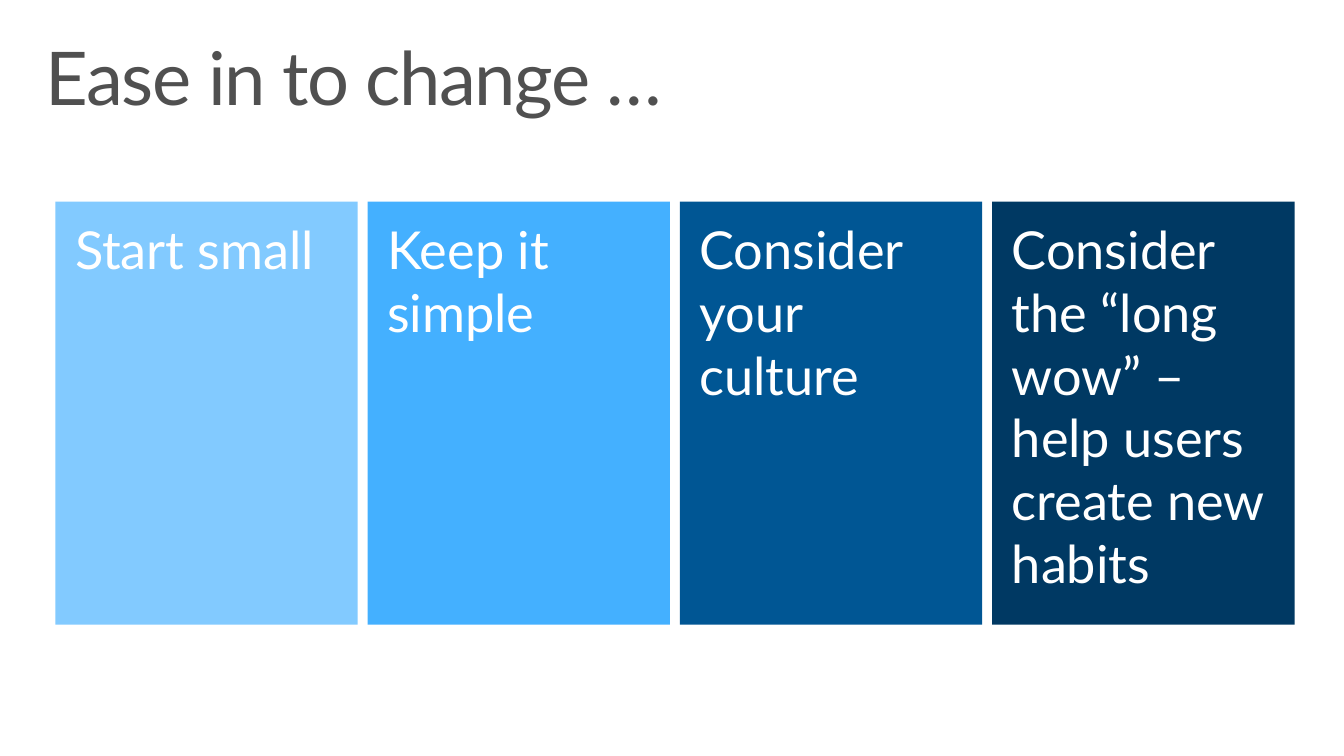
"""Build the slide "Ease in to change …" with four coloured panels."""
from pptx import Presentation
from pptx.dml.color import RGBColor
from pptx.enum.shapes import MSO_SHAPE
from pptx.enum.text import MSO_ANCHOR, PP_ALIGN
from pptx.util import Inches, Pt

RECTANGLE = MSO_SHAPE.RECTANGLE
TOP = MSO_ANCHOR.TOP
LEFT = PP_ALIGN.LEFT
PANELS = [
    ("Start small", "82CAFF"),
    ("Keep it simple", "44B0FF"),
    ("Consider your culture", "005694"),
    ("Consider the “long wow” – help users create new habits", "003963"),
]
PANEL_LEFT, PANEL_STEP = 0.56, 3.16


def color(hex_value):
    return RGBColor.from_string(hex_value)


def write_text(shape, text, size, hex_value, side, edge):
    frame = shape.text_frame
    frame.text = text
    frame.word_wrap = True
    frame.vertical_anchor = TOP
    frame.margin_left = frame.margin_right = Inches(side)
    frame.margin_top = frame.margin_bottom = Inches(edge)
    para = frame.paragraphs[0]
    para.alignment = LEFT
    span = para.runs[0]
    span.font.name = "Lato"
    span.font.size = Pt(size)
    span.font.color.rgb = color(hex_value)
    return para


deck = Presentation()
deck.slide_width, deck.slide_height = Inches(13.6), Inches(7.65)
page = deck.slides.add_slide(deck.slide_layouts[5])

title = page.shapes.title
title.left, title.top = Inches(0.3), Inches(0.32)
title.width, title.height = Inches(13), Inches(1)
title_para = write_text(title, "Ease in to change …", 54, "505050", 0.16, 0.1)
title_para.line_spacing = 0.9
title_para.runs[0].font._element.set("spc", "-100")

for index, (text, fill) in enumerate(PANELS):
    left = PANEL_LEFT + index * PANEL_STEP
    panel = page.shapes.add_shape(
        RECTANGLE, Inches(left), Inches(2.04), Inches(3.06), Inches(4.28))
    panel.shadow.inherit = False
    panel.fill.solid()
    panel.fill.fore_color.rgb = color(fill)
    panel.line.fill.background()
    write_text(panel, text, 38.1, "FFFFFF", 0.2, 0.16)

deck.save("out.pptx")
